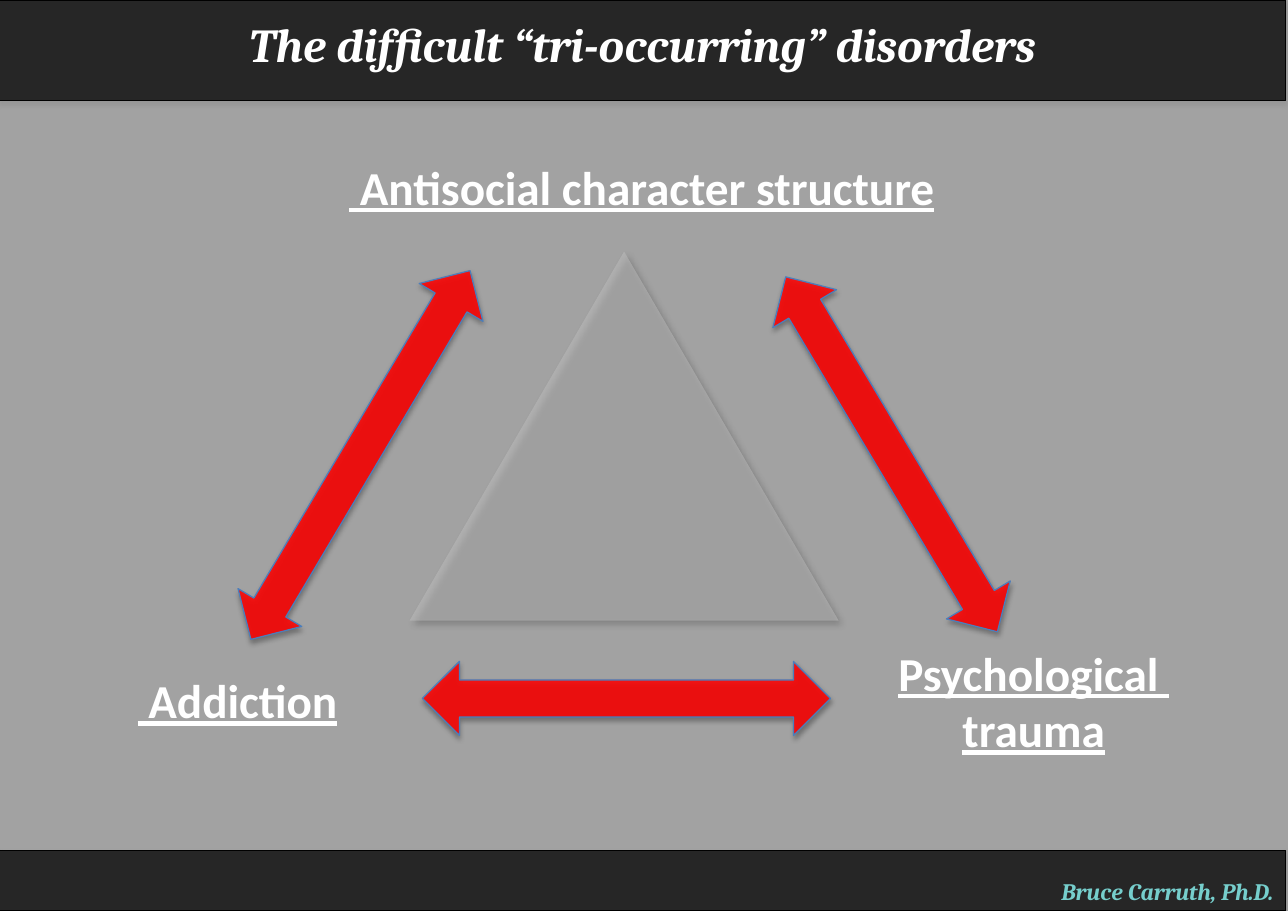
from lxml import etree
from pptx import Presentation
from pptx import util as u
from pptx.dml.color import RGBColor
from pptx.enum import shapes, text
from pptx.oxml import ns

COLOURS = {
    "background": "A2A2A2", "band": "262626", "black": "000000", "grey": "808080",
    "triangle": "BFBFBF", "arrow": "FF0000", "arrow_edge": "4B7EBC",
    "white": "FFFFFF", "author": "76CECC",
}
WIDTH, HEIGHT = 26.92, 19.05
BAND_LEFT, ARROW_WIDTH = -0.05, 1.55

# Boxes are left, top, width, height in centimetres
TITLE = ("The difficult “tri-occurring” disorders", (0.3, 0.2, 26.24, 1.9))
AUTHOR = "Bruce Carruth, Ph.D."
FOOTER_BOX = (BAND_LEFT, 17.78, WIDTH, 1.27)
HEADER_BOX = (BAND_LEFT, 0, WIDTH, 2.11)
TRIANGLE_BOX = (8.56, 5.26, 8.97, 7.72)
DISORDERS = [  # lines, box, line spacing
    ([" Antisocial character structure"], (6.53, 3.18, 13.77, 1.45), 1.0),
    (["Psychological ", "trauma"], (16.41, 13.34, 10.39, 2.64), 1.0),
    ([" Addiction"], (0.71, 14.15, 8.51, 1.24), 0.8),
]
ARROWS = [  # left, top, length, rotation
    (17.86, 5.18, 8.64, 329.2),
    (12.32, 10.34, 8.53, 270),
    (6.76, 5.03, 8.97, 30.7),
]
# colour, opacity %, blur pt, distance pt, direction in degrees
BAND_SHADOW = ("grey", 35, 3.1, 1.8, 90)
ARROW_SHADOW = ("black", 35, 3.1, 1.8, 90)
TRIANGLE_SHADOW = ("black", 40, 4, 3, 45)


def rgb(name):
    return RGBColor.from_string(COLOURS[name])


def add_alpha(colour_element, percent):
    alpha = etree.SubElement(colour_element, ns.qn("a:alpha"))
    alpha.set("val", str(percent * 1000))


def add_shadow(shape, colour, opacity, blur, distance, direction):
    shape.shadow.inherit = False
    effects = shape._element.spPr.find(ns.qn("a:effectLst"))
    outer = etree.SubElement(effects, ns.qn("a:outerShdw"), {
        "blurRad": str(int(u.Pt(blur))), "dist": str(int(u.Pt(distance))),
        "dir": str(direction * 60000), "rotWithShape": "0"})
    tone = etree.SubElement(outer, ns.qn("a:srgbClr"), val=COLOURS[colour])
    add_alpha(tone, opacity)


def add_figure(page, kind, box, fill, shadow, edge=None, opacity=100):
    shape = page.shapes.add_shape(kind, *map(u.Cm, box))
    shape.fill.solid()
    shape.fill.fore_color.rgb = rgb(fill)
    if opacity < 100:
        add_alpha(shape._element.spPr.find(".//" + ns.qn("a:srgbClr")), opacity)
    if edge:
        shape.line.color.rgb = rgb(edge)
        shape.line.width = u.Pt(0.75)
    else:
        shape.line.fill.background()
    add_shadow(shape, *shadow)
    return shape


def write(shape, lines, font, size, colour, align=text.PP_ALIGN.CENTER,
          italic=False, underline=False, spacing=1.0):
    frame = shape.text_frame
    frame.word_wrap = True
    frame.text = "\n".join(lines)
    for para in frame.paragraphs:
        para.alignment = align
        para.line_spacing = spacing
        para.font.name = font
        para.font.size = u.Pt(size)
        para.font.bold = True
        para.font.italic = italic
        para.font.underline = underline
        para.font.color.rgb = rgb(colour)


def main():
    deck = Presentation()
    deck.slide_width, deck.slide_height = u.Cm(WIDTH), u.Cm(HEIGHT)
    page = deck.slides.add_slide(deck.slide_layouts[6])
    page.background.fill.solid()
    page.background.fill.fore_color.rgb = rgb("background")
    preset = shapes.MSO_SHAPE

    add_figure(page, preset.ISOSCELES_TRIANGLE, TRIANGLE_BOX, "triangle",
               TRIANGLE_SHADOW, opacity=49)
    footer, _ = [add_figure(page, preset.RECTANGLE, box, "band", BAND_SHADOW, "black")
                 for box in (FOOTER_BOX, HEADER_BOX)]
    footer.text_frame.vertical_anchor = text.MSO_ANCHOR.BOTTOM
    write(footer, [AUTHOR], "Cambria", 14, "author", text.PP_ALIGN.RIGHT, italic=True)

    title, title_box = TITLE
    write(page.shapes.add_textbox(*map(u.Cm, title_box)), [title],
          "Cambria", 28, "white", italic=True)
    for lines, box, spacing in DISORDERS:
        write(page.shapes.add_textbox(*map(u.Cm, box)), lines,
              "Calibri", 28, "white", underline=True, spacing=spacing)

    for left, top, length, rotation in ARROWS:
        arrow = add_figure(page, preset.UP_DOWN_ARROW, (left, top, ARROW_WIDTH, length),
                           "arrow", ARROW_SHADOW, "arrow_edge", opacity=86)
        arrow.rotation = rotation

    deck.save("out.pptx")


if __name__ == "__main__":
    main()
